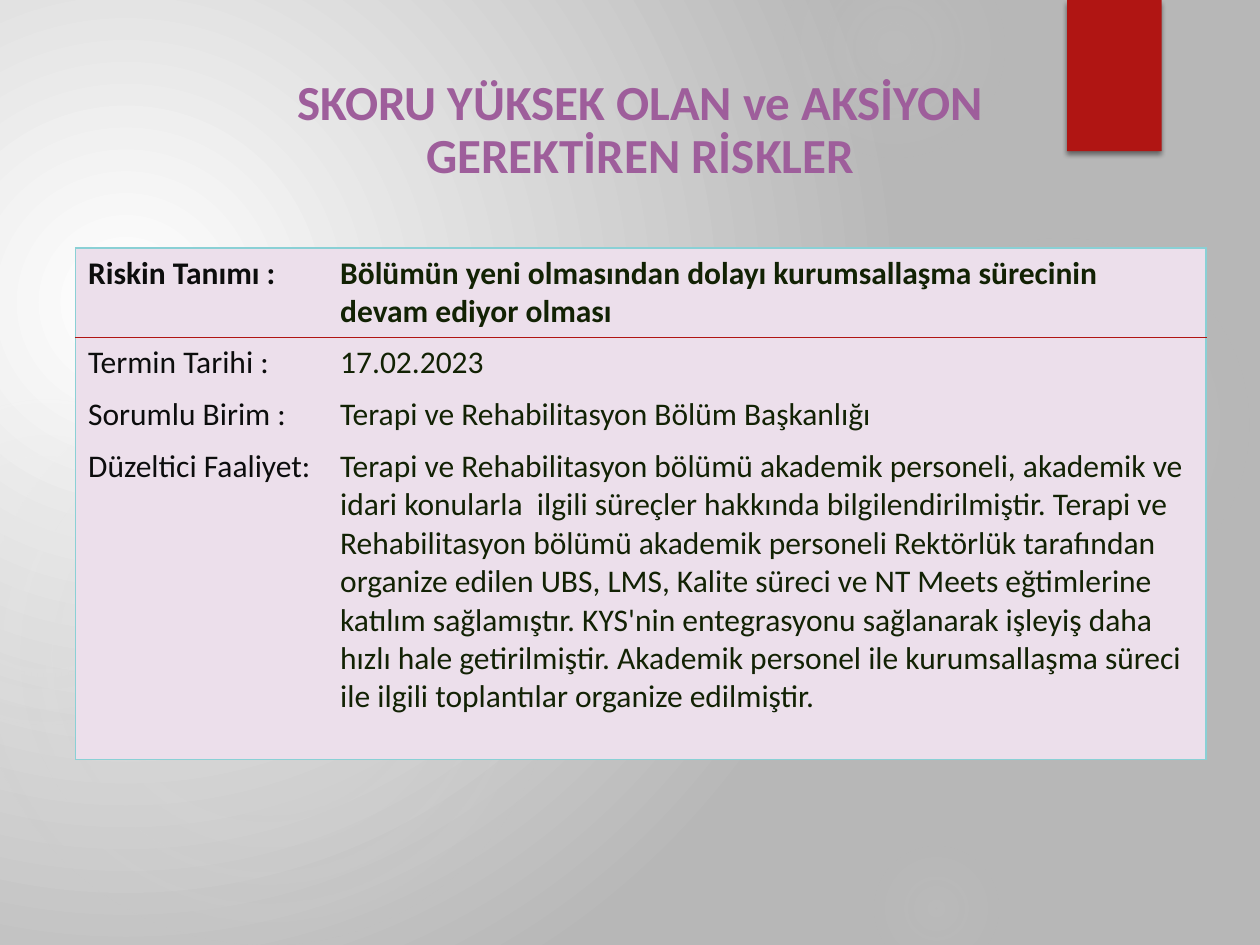
import pptx
import pptx.util
import pptx.oxml
import pptx.oxml.ns
from pptx.dml.color import RGBColor
from pptx.enum.shapes import MSO_SHAPE
from pptx.enum.text import MSO_ANCHOR, PP_ALIGN

Inches = pptx.util.Inches
Pt = pptx.util.Pt

WHITE = RGBColor(0xFF, 0xFF, 0xFF)
GREY = RGBColor(0xB7, 0xB7, 0xB7)
GLOW = RGBColor(0xD9, 0xD9, 0xD9)
RED = RGBColor(0xB0, 0x15, 0x13)
PURPLE = RGBColor(0x9E, 0x5E, 0x9B)
PINK = RGBColor(0xEC, 0xDF, 0xEB)
TEAL = RGBColor(0x8A, 0xD0, 0xD5)
BLACK = RGBColor(0x0C, 0x0D, 0x0D)
GREEN = RGBColor(0x12, 0x22, 0x04)

TITLE = "SKORU YÜKSEK OLAN ve AKSİYON GEREKTİREN RİSKLER"
ROWS = [
    ("Riskin Tanımı :",
     "Bölümün yeni olmasından dolayı kurumsallaşma sürecinin devam ediyor olması"),
    ("Termin Tarihi :", "17.02.2023"),
    ("Sorumlu Birim :", "Terapi ve Rehabilitasyon Bölüm Başkanlığı"),
    ("Düzeltici Faaliyet:",
     "Terapi ve Rehabilitasyon bölümü akademik personeli, akademik ve idari "
     "konularla  ilgili süreçler hakkında bilgilendirilmiştir. Terapi ve "
     "Rehabilitasyon bölümü akademik personeli Rektörlük tarafından organize "
     "edilen UBS, LMS, Kalite süreci ve NT Meets eğtimlerine katılım "
     "sağlamıştır. KYS'nin entegrasyonu sağlanarak işleyiş daha hızlı hale "
     "getirilmiştir. Akademik personel ile kurumsallaşma süreci ile ilgili "
     "toplantılar organize edilmiştir."),
]
WIDTHS = [2, 6.97]
HEIGHTS = [0.71, 0.41, 0.41, 2.53]
INKS = [BLACK, GREEN]
GLOWS = [
    (6.89, 1.83, 3.08, [(0, 7), (36, 6), (69, 0)]),
    (6.22, -0.5, 1.75, [(0, 14), (36, 7), (73, 0)]),
    (6.89, 6.67, 1.08, [(0, 9), (36, 5), (66, 0)]),
    (-0.17, 2.92, 4.58, [(0, 11), (36, 10), (75, 0)]),
    (-0.92, 3.17, 2.58, [(0, 8), (36, 8), (72, 0)]),
]
NS = pptx.oxml.ns.nsdecls("a")


def style(font, form):
    for name, value in form.items():
        setattr(font, name, value)


def fade(fill, root, stops, rect):
    fill.solid()
    old = root.xpath(".//a:solidFill")[0]
    marks = "".join(
        f'<a:gs pos="{pos * 1000}"><a:srgbClr val="{ink}">'
        f'<a:alpha val="{alpha * 1000}"/></a:srgbClr></a:gs>'
        for pos, ink, alpha in stops)
    sides = " ".join(f'{side}="{num * 1000}"' for side, num in zip("ltrb", rect))
    new = pptx.oxml.parse_xml(
        f'<a:gradFill {NS} rotWithShape="1"><a:gsLst>{marks}</a:gsLst>'
        f'<a:path path="circle"><a:fillToRect {sides}/></a:path></a:gradFill>')
    old.getparent().replace(old, new)


def edge(cell, inks):
    props = cell._tc.get_or_add_tcPr()
    for spot, side in enumerate("LRTB"):
        ink = inks.get(side)
        paint = (f'<a:solidFill><a:srgbClr val="{ink}"/></a:solidFill>'
                 if ink else "<a:noFill/>")
        props.insert(spot, pptx.oxml.parse_xml(
            f'<a:ln{side} {NS} w="{Pt(1)}">{paint}</a:ln{side}>'))


def shape(slide, kind, box):
    item = slide.shapes.add_shape(kind, *map(Inches, box))
    item.shadow.inherit = False
    item.line.fill.background()
    return item


def scene(slide):
    fade(slide.background.fill, slide.element,
         [(0, WHITE, 100), (100, GREY, 100)], (45, 65, 125, 100))
    for left, top, size, stops in GLOWS:
        orb = shape(slide, MSO_SHAPE.OVAL, (left, top, size, size))
        fade(orb.fill, orb.element.spPr,
             [(pos, GLOW, alpha) for pos, alpha in stops], (50, 50, 50, 50))
    tab = shape(slide, MSO_SHAPE.RECTANGLE, (8.47, 0, 0.75, 1.2))
    tab.fill.solid()
    tab.fill.fore_color.rgb = RED
    tab.element.spPr.xpath("./a:effectLst")[0].append(pptx.oxml.parse_xml(
        f'<a:outerShdw {NS} blurRad="{Pt(3)}" dist="{Pt(2)}" dir="5400000" '
        'rotWithShape="0"><a:srgbClr val="000000"><a:alpha val="45000"/>'
        '</a:srgbClr></a:outerShdw>'))


def title(slide):
    box = slide.shapes.add_textbox(*map(Inches, (2.2, 0.58, 5.76, 0.93)))
    style(box.text_frame, {"word_wrap": True, "vertical_anchor": MSO_ANCHOR.BOTTOM})
    para = box.text_frame.paragraphs[0]
    style(para, {"text": TITLE, "alignment": PP_ALIGN.CENTER,
                 "line_spacing": 0.9, "space_after": Pt(6)})
    style(para.font, {"name": "Calibri", "size": Pt(28), "bold": True})
    para.font.color.rgb = PURPLE


def table(slide):
    grid = slide.shapes.add_table(
        len(ROWS), len(WIDTHS), Inches(0.6), Inches(1.97),
        Inches(sum(WIDTHS)), Inches(sum(HEIGHTS))).table
    for col, width in zip(grid.columns, WIDTHS):
        col.width = Inches(width)
    last = len(ROWS) - 1
    for i, texts in enumerate(ROWS):
        grid.rows[i].height = Inches(HEIGHTS[i])
        for j, text in enumerate(texts):
            cell = grid.cell(i, j)
            cell.text = text
            cell.fill.solid()
            cell.fill.fore_color.rgb = PINK
            font = cell.text_frame.paragraphs[0].runs[0].font
            style(font, {"name": "Calibri", "size": Pt(18), "bold": i == 0})
            font.color.rgb = INKS[j]
            edge(cell, {
                "LR"[j]: TEAL,
                "T": {0: TEAL, 1: RED}.get(i),
                "B": {0: RED, last: TEAL}.get(i)})


def main():
    deck = pptx.Presentation()
    style(deck, {"slide_width": Inches(10), "slide_height": Inches(7.5)})
    slide = deck.slides.add_slide(deck.slide_layouts[6])
    scene(slide)
    title(slide)
    table(slide)
    deck.save("out.pptx")


if __name__ == "__main__":
    main()
